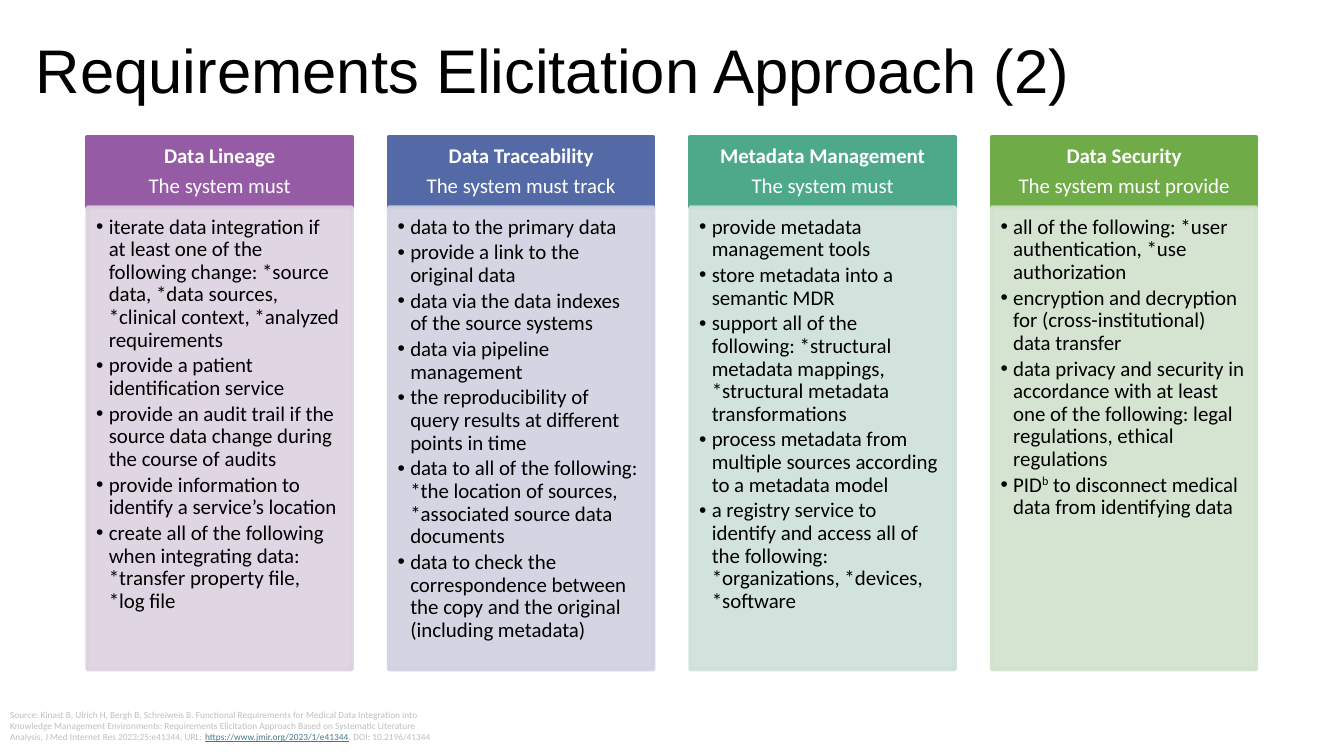
from lxml import etree
from pptx import Presentation
from pptx.dml.color import RGBColor
from pptx.enum.shapes import MSO_SHAPE
from pptx.enum.text import MSO_ANCHOR, MSO_AUTO_SIZE, PP_ALIGN
from pptx.oxml.ns import qn
from pptx.util import Pt

RECT = MSO_SHAPE.RECTANGLE
LEFT, CENTER = PP_ALIGN.LEFT, PP_ALIGN.CENTER
TOP, MIDDLE, BOTTOM = MSO_ANCHOR.TOP, MSO_ANCHOR.MIDDLE, MSO_ANCHOR.BOTTOM
NO_FIT, GROW = MSO_AUTO_SIZE.NONE, MSO_AUTO_SIZE.SHAPE_TO_FIT_TEXT

BLACK, WHITE, GREY, LINK = "000000", "FFFFFF", "BFBFBF", "467886"
SLIM_INSETS = (5.4, 2.7, 5.4, 2.7)

# Column grid
FIRST_LEFT, COLUMN_STEP, COLUMN_WIDTH = 46.8, 161.5, 141.8
HEADER_TOP, HEADER_HEIGHT, LIST_HEIGHT = 73.4, 37.6, 247.7

# Heading, lead-in, header colour, list colour, requirements
COLUMNS = [
    ("Data Lineage", "The system must", "965BA5", "DDD1E0", [
        "iterate data integration if at least one of the following change: "
        "*source data, *data sources, *clinical context, *analyzed requirements",
        "provide a patient identification service",
        "provide an audit trail if the source data change during the course of audits",
        "provide information to identify a service’s location",
        "create all of the following when integrating data: "
        "*transfer property file, *log file",
    ]),
    ("Data Traceability", "The system must track", "536AA7", "CFD2DF", [
        "data to the primary data",
        "provide a link to the original data",
        "data via the data indexes of the source systems",
        "data via pipeline management",
        "the reproducibility of query results at different points in time",
        "data to all of the following: *the location of sources, "
        "*associated source data documents",
        "data to check the correspondence between the copy and the original "
        "(including metadata)",
    ]),
    ("Metadata Management", "The system must", "4DA98A", "CEE0DB", [
        "provide metadata management tools",
        "store metadata into a semantic MDR",
        "support all of the following: *structural metadata mappings, "
        "*structural metadata transformations",
        "process metadata from multiple sources according to a metadata model",
        "a registry service to identify and access all of the following: "
        "*organizations, *devices, *software",
    ]),
    ("Data Security", "The system must provide", "6FAB46", "D1E1CD", [
        "all of the following: *user authentication, *use authorization",
        "encryption and decryption for (cross-institutional) data transfer",
        "data privacy and security in accordance with at least one of the following: "
        "legal regulations, ethical regulations",
        ("PID", "b", " to disconnect medical data from identifying data"),
    ]),
]


def rgb(hex_colour):
    return RGBColor.from_string(hex_colour)


class RequirementsSlide:
    font, size, spacing = "Calibri", 11.2, 0.9

    def __init__(self, slide):
        self.slide = slide

    def frame(self, shape, insets, anchor, fit=NO_FIT):
        frame = shape.text_frame
        frame.word_wrap = True
        frame.auto_size = fit
        frame.vertical_anchor = anchor
        (frame.margin_left, frame.margin_top,
         frame.margin_right, frame.margin_bottom) = map(Pt, insets)
        return frame

    def paragraph(self, frame, index, gap=0, align=LEFT, spacing=spacing):
        paragraph = frame.add_paragraph() if index else frame.paragraphs[0]
        paragraph.alignment = align
        paragraph.line_spacing = spacing
        paragraph.space_before = Pt(gap if index else 0)
        return paragraph

    def run(self, paragraph, text, colour=BLACK, size=size, font=font, bold=False):
        run = paragraph.add_run()
        run.text = text
        run.font.name, run.font.size, run.font.bold = font, Pt(size), bold
        run.font.color.rgb = rgb(colour)
        return run

    def title(self, text):
        heading = self.slide.shapes.title
        heading.left, heading.top = Pt(13.7), Pt(12.2)
        heading.width, heading.height = Pt(589), Pt(47.5)
        frame = self.frame(heading, SLIM_INSETS, BOTTOM)
        self.run(self.paragraph(frame, 0), text, size=33, font="Arial")

    def panel(self, left, top, height, colour, opacity=100):
        panel = self.slide.shapes.add_shape(
            RECT, Pt(left), Pt(top), Pt(COLUMN_WIDTH), Pt(height))
        panel.shadow.inherit = False
        panel.fill.solid()
        panel.line.width = Pt(2)
        for paint in (panel.fill, panel.line.fill):
            paint.solid()
            paint.fore_color.rgb = rgb(colour)
        if opacity < 100:
            for tint in panel._element.spPr.iter(qn("a:srgbClr")):
                etree.SubElement(tint, qn("a:alpha"), val=str(opacity * 1000))
        return panel

    def header(self, left, heading, lead_in, colour):
        panel = self.panel(left, HEADER_TOP, HEADER_HEIGHT, colour)
        frame = self.frame(panel, (6.4, 3.6, 6.4, 3.6), MIDDLE)
        for index, text in enumerate((heading, lead_in)):
            line = self.paragraph(frame, index, 3.9, CENTER)
            self.run(line, text, WHITE, bold=index == 0)

    def bullet(self, paragraph):
        paragraph.level = 1
        properties = paragraph._p.get_or_add_pPr()
        properties.set("marL", str(Pt(6.75)))
        properties.set("indent", str(-Pt(6.75)))
        colour = etree.SubElement(properties, qn("a:buClr"))
        etree.SubElement(colour, qn("a:srgbClr"), val=BLACK)
        etree.SubElement(properties, qn("a:buFont"), typeface="Arial")
        etree.SubElement(properties, qn("a:buChar"), char="•")

    def requirements(self, left, items, colour):
        panel = self.panel(left, HEADER_TOP + HEADER_HEIGHT, LIST_HEIGHT, colour, 90)
        frame = self.frame(panel, (4.8, 4.8, 6.4, 7.2), TOP)
        for index, item in enumerate(items):
            line = self.paragraph(frame, index, 1.7)
            self.bullet(line)
            # The second part of a split item is a superscript
            for part, text in enumerate((item,) if isinstance(item, str) else item):
                run = self.run(line, text)
                if part == 1:
                    run.font._element.set("baseline", "30000")

    def source(self, before, address, after):
        box = self.slide.shapes.add_textbox(Pt(0), Pt(377.3), Pt(237.6), Pt(23.8))
        line = self.paragraph(self.frame(box, SLIM_INSETS, TOP, GROW), 0, spacing=1.0)
        self.run(line, before, GREY, 5)
        self.run(line, address, LINK, 5).font.underline = True
        self.run(line, after, GREY, 5)


def main():
    deck = Presentation()
    deck.slide_width, deck.slide_height = Pt(720), Pt(405)
    page = RequirementsSlide(deck.slides.add_slide(deck.slide_layouts[5]))

    page.title("Requirements Elicitation Approach (2)")
    page.source(
        "Source: Kinast B, Ulrich H, Bergh B, Schreiweis B. Functional Requirements for "
        "Medical Data Integration into Knowledge Management Environments: Requirements "
        "Elicitation Approach Based on Systematic Literature Analysis, "
        "J Med Internet Res 2023;25:e41344, URL: ",
        "https://www.jmir.org/2023/1/e41344",
        ", DOI: 10.2196/41344")

    # Four requirement columns
    for number, (heading, lead_in, strong, pale, items) in enumerate(COLUMNS):
        left = FIRST_LEFT + number * COLUMN_STEP
        page.header(left, heading, lead_in, strong)
        page.requirements(left, items, pale)

    deck.save("out.pptx")


if __name__ == "__main__":
    main()
